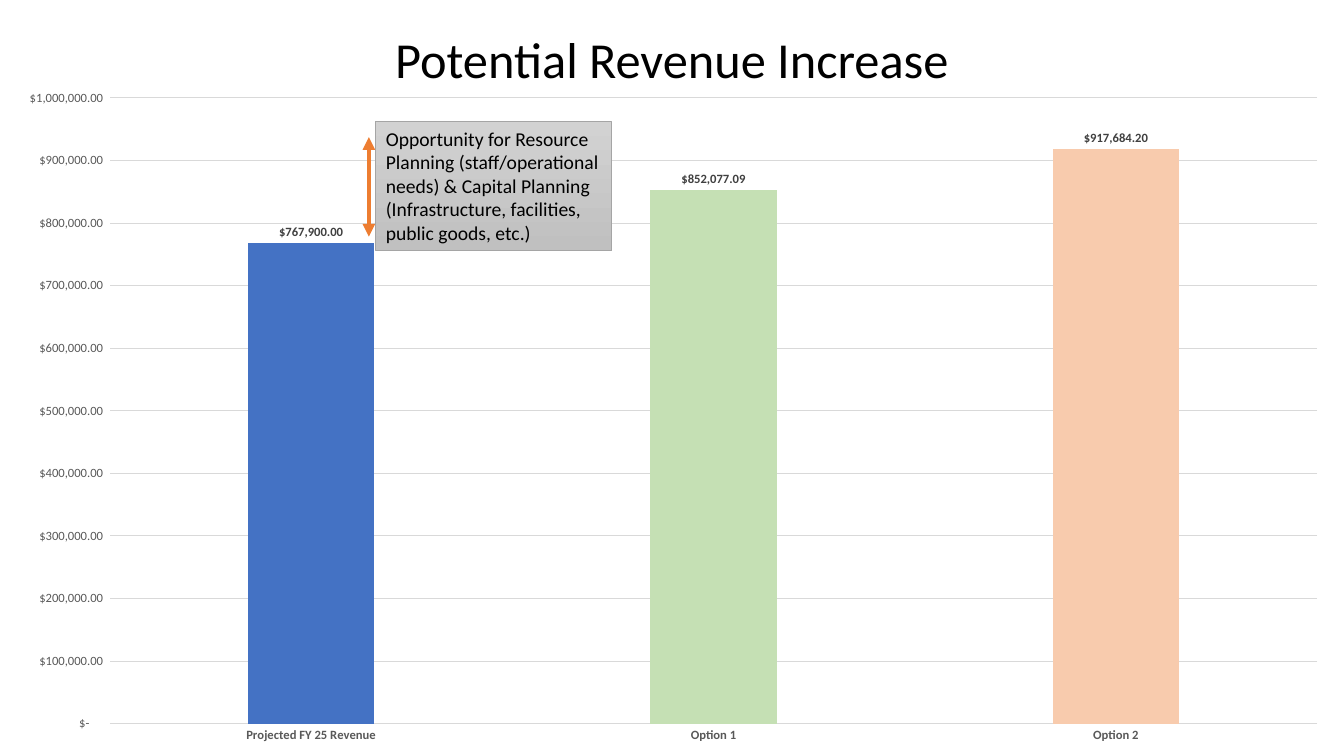
import pptx
import pptx.chart.data
import pptx.dml.color
import pptx.enum.chart
import pptx.enum.shapes
import pptx.enum.text
import pptx.oxml
import pptx.oxml.ns
import pptx.util
from lxml import etree

Pt = pptx.util.Pt
FONT = "Calibri"
MONEY = '_("$"* #,##0.00_);_("$"* \\(#,##0.00\\);_("$"* "-"??_);_(@_)'
COLORS = {
    "text": "000000", "axis": "595959", "label": "404040", "grid": "D9D9D9",
    "current": "4472C4", "option1": "C5E0B4", "option2": "F8CBAD",
    "arrow": "ED7D31", "note_top": "D2D2D2", "note_bottom": "C0C0C0", "note_line": "A5A5A5",
}
REVENUE = [
    ("Projected FY 25 Revenue", 767900, "current"),
    ("Option 1", 852077.09, "option1"),
    ("Option 2", 917684.2, "option2"),
]


def rgb(name):
    return pptx.dml.color.RGBColor.from_string(COLORS[name])


def set_font(font, size, color, bold=False):
    font.name, font.size, font.bold = FONT, Pt(size), bold
    font.color.rgb = rgb(color)


def set_line(line, color, width):
    line.color.rgb = rgb(color)
    line.width = Pt(width)


def write(tf, text, size, align="LEFT", anchor="MIDDLE", spacing=1.0):
    tf.word_wrap = True
    tf.vertical_anchor = getattr(pptx.enum.text.MSO_ANCHOR, anchor)
    p = tf.paragraphs[0]
    p.alignment = getattr(pptx.enum.text.PP_ALIGN, align)
    p.line_spacing = spacing
    r = p.add_run()
    r.text = text
    set_font(r.font, size, "text")


def add_title(slide, x, y, w, h):
    sp = slide.shapes.title
    sp.left, sp.top, sp.width, sp.height = Pt(x), Pt(y), Pt(w), Pt(h)
    write(sp.text_frame, "Potential Revenue Increase", 36, "CENTER", spacing=0.9)


def add_revenue_chart(slide, x, y, w, h):
    data = pptx.chart.data.CategoryChartData(number_format=MONEY)
    data.categories = [name for name, _, _ in REVENUE]
    data.add_series("Series 1", [value for _, value, _ in REVENUE])
    chart = slide.shapes.add_chart(
        pptx.enum.chart.XL_CHART_TYPE.COLUMN_CLUSTERED, Pt(x), Pt(y), Pt(w), Pt(h), data).chart
    chart.has_title = chart.has_legend = False
    set_font(chart.font, 10, "text")

    # Transparent chart area, so the title shows through
    sp_pr = pptx.oxml.parse_xml(
        f'<c:spPr {pptx.oxml.ns.nsdecls("c", "a")}><a:noFill/><a:ln><a:noFill/></a:ln></c:spPr>')
    chart._chartSpace.chart.addnext(sp_pr)

    # Columns and value labels
    plot = chart.plots[0]
    plot.gap_width, plot.overlap, plot.vary_by_categories = 219, -27, False
    series = plot.series[0]
    series.format.fill.solid()
    series.format.fill.fore_color.rgb = rgb("current")
    for i, (_, _, color) in enumerate(REVENUE):
        fill = series.points[i].format.fill
        fill.solid()
        fill.fore_color.rgb = rgb(color)
    labels = series.data_labels
    labels.show_value = True
    labels.number_format, labels.number_format_is_linked = MONEY, False
    labels.position = pptx.enum.chart.XL_LABEL_POSITION.OUTSIDE_END
    set_font(labels.font, 9, "label", bold=True)

    # Axes
    cat, val = chart.category_axis, chart.value_axis
    for axis in (cat, val):
        axis.major_tick_mark = axis.minor_tick_mark = pptx.enum.chart.XL_TICK_MARK.NONE
        set_font(axis.tick_labels.font, 9, "axis", bold=axis is cat)
    set_line(cat.format.line, "grid", 0.75)
    val.minimum_scale, val.maximum_scale, val.major_unit = 0, 1000000, 100000
    val.tick_labels.number_format, val.tick_labels.number_format_is_linked = MONEY, False
    val.format.line.fill.background()
    set_line(val.major_gridlines.format.line, "grid", 0.75)


def add_opportunity_note(slide, x, y, w, h):
    # Double-headed arrow just left of the box
    arrow_x = Pt(x - 5)
    arrow = slide.shapes.add_connector(
        pptx.enum.shapes.MSO_CONNECTOR.STRAIGHT, arrow_x, Pt(y + 82), arrow_x, Pt(y + 11))
    set_line(arrow.line, "arrow", 3)
    ln = arrow.line._get_or_add_ln()
    for end in ("a:headEnd", "a:tailEnd"):
        etree.SubElement(ln, pptx.oxml.ns.qn(end), type="triangle")
    etree.SubElement(arrow._element.spPr, pptx.oxml.ns.qn("a:effectLst"))

    # Gradient box
    sp = slide.shapes.add_shape(
        pptx.enum.shapes.MSO_SHAPE.RECTANGLE, Pt(x), Pt(y), Pt(w), Pt(h))
    sp.shadow.inherit = False
    sp.fill.gradient()
    sp.fill.gradient_angle = 270
    for stop, color in zip(sp.fill.gradient_stops, ("note_top", "note_bottom")):
        stop.color.rgb = rgb(color)
    sp.fill.gradient_stops[0].position, sp.fill.gradient_stops[1].position = 0, 1
    set_line(sp.line, "note_line", 0.5)
    sp.text_frame.auto_size = pptx.enum.text.MSO_AUTO_SIZE.SHAPE_TO_FIT_TEXT
    write(sp.text_frame, "Opportunity for Resource Planning (staff/operational needs) & Capital "
          "Planning (Infrastructure, facilities, public goods, etc.)", 14, anchor="TOP")


def main():
    prs = pptx.Presentation()
    prs.slide_width, prs.slide_height = Pt(960), Pt(540)
    slide = prs.slides.add_slide(prs.slide_layouts[5])
    add_title(slide, 66, 0, 828, 89.5)
    add_revenue_chart(slide, 0, 55, 960, 485)
    add_opportunity_note(slide, 268.5, 87, 168.5, 92)
    prs.save("out.pptx")


if __name__ == "__main__":
    main()
